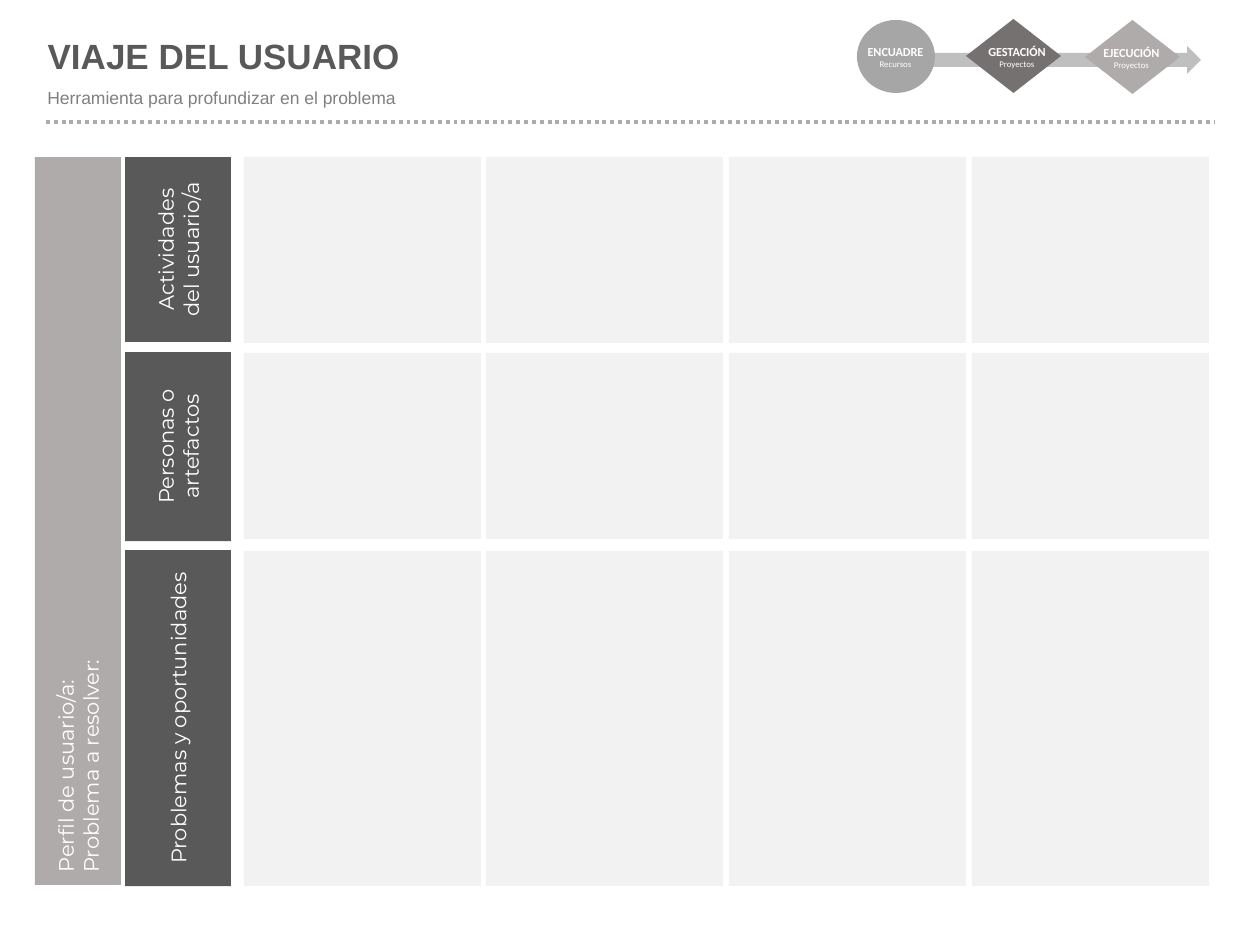
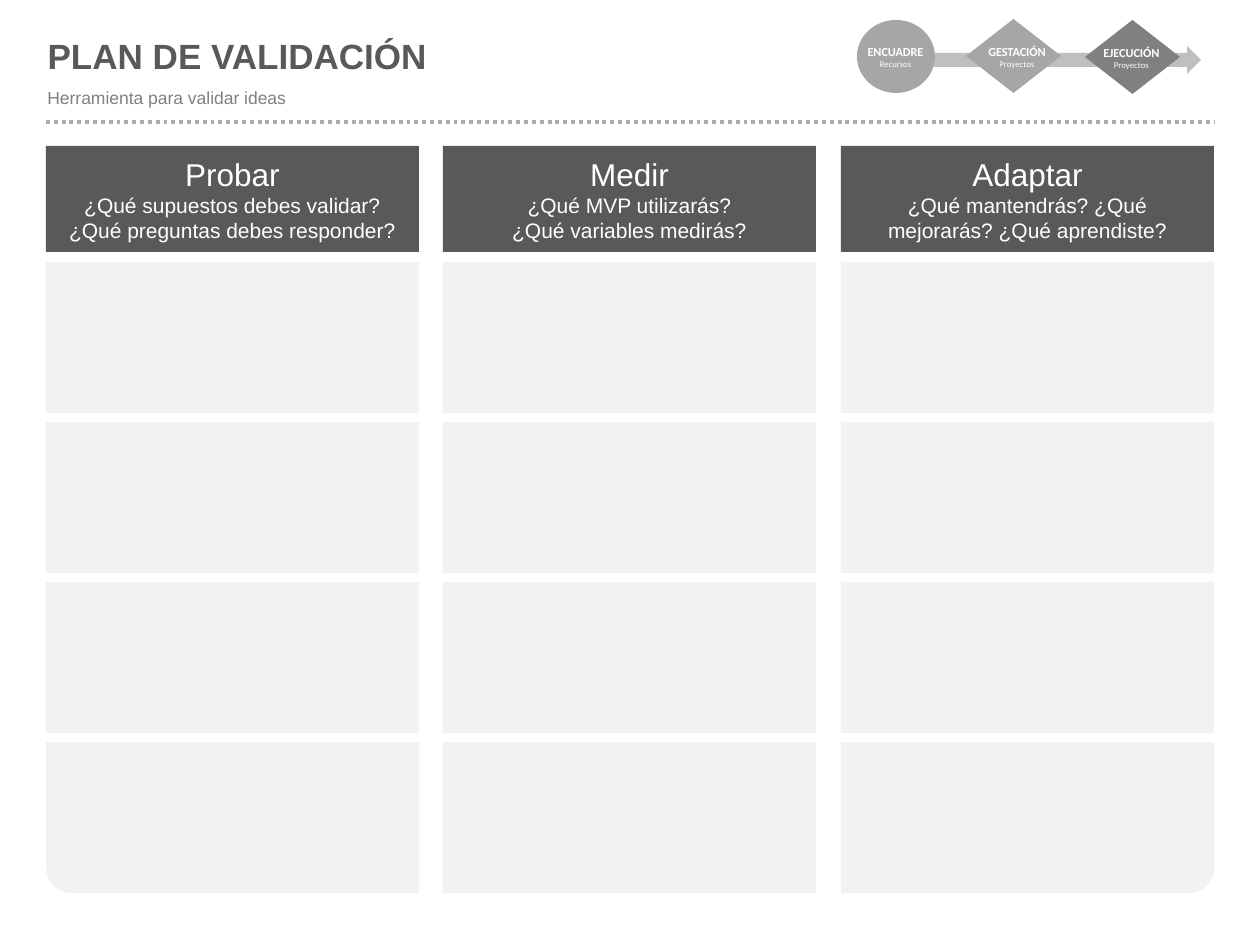
import dataclasses

import lxml.etree
import pptx
import pptx.dml.color
import pptx.enum.dml
import pptx.enum.shapes
import pptx.enum.text
import pptx.oxml.ns
import pptx.util


@dataclasses.dataclass(frozen=True)
class Theme:
    dark: str = "595959"
    subtitle: str = "808080"
    band: str = "AFABAB"
    arrow: str = "BFBFBF"
    stage: str = "A6A6A6"
    gestation: str = "767171"
    cell: str = "F2F2F2"
    white: str = "FFFFFF"
    heading_font: str = "Arial"
    label_font: str = "Montserrat"
    stage_font: str = "Calibri"
    title_size: int = 20
    heading_size: int = 18
    body_size: int = 12
    subtitle_size: int = 10
    stage_size: int = 7
    caption_size: int = 5


theme = Theme()
PX = 914400 / 126
SHAPES = pptx.enum.shapes.MSO_SHAPE
ALIGN = pptx.enum.text.PP_ALIGN
ANCHOR = pptx.enum.text.MSO_ANCHOR
AUTO_SIZE = pptx.enum.text.MSO_AUTO_SIZE


def add_block(shapes, kind, box, color, rotation=0):
    left, top, width, height = box
    if rotation == 270:
        left, top = left + (width - height) / 2, top + (height - width) / 2
        width, height = height, width
    shape = shapes.add_shape(kind, *(round(length * PX) for length in (left, top, width, height)))
    shape.rotation = rotation
    shape.shadow.inherit = False
    shape.fill.solid()
    shape.fill.fore_color.rgb = pptx.dml.color.RGBColor.from_string(color)
    shape.line.fill.background()
    return shape


def write_lines(shape, lines, font_name, color, align, anchor=ANCHOR.MIDDLE):
    frame = shape.text_frame
    frame.word_wrap = True
    frame.vertical_anchor = anchor
    for index, (text, size, bold) in enumerate(lines):
        paragraph = frame.add_paragraph() if index else frame.paragraphs[0]
        paragraph.alignment = align
        run = paragraph.add_run()
        run.text = text
        run.font.name = font_name
        run.font.size = pptx.util.Pt(size)
        run.font.bold = bold
        run.font.color.rgb = pptx.dml.color.RGBColor.from_string(color)


presentation = pptx.Presentation()
presentation.slide_width = round(1260 * PX)
presentation.slide_height = round(945 * PX)

stages = [
    ("ENCUADRE", "Recursos", SHAPES.OVAL, (857, 20, 78, 73), (854, 38, 83, 38)),
    ("GESTACIÓN", "Proyectos", SHAPES.DIAMOND, (966, 19, 95, 74), (974, 38, 86, 38)),
    ("EJECUCIÓN", "Proyectos", SHAPES.DIAMOND, (1085, 20, 95, 74), (1090, 39, 83, 38)),
]
pages = [
    ("VIAJE DEL USUARIO", "Herramienta para profundizar en el problema",
     (theme.stage, theme.gestation, theme.band)),
    ("PLAN DE VALIDACIÓN", "Herramienta para validar ideas",
     (theme.stage, theme.stage, theme.subtitle)),
]

for title_text, subtitle_text, stage_colors in pages:
    slide = presentation.slides.add_slide(presentation.slide_layouts[5])
    title = slide.shapes.title
    title.left, title.top, title.width, title.height = (
        round(length * PX) for length in (35, 33, 617, 58))
    write_lines(title, [(title_text, theme.title_size, True)],
                theme.heading_font, theme.dark, ALIGN.LEFT, ANCHOR.TOP)
    title.text_frame.auto_size = AUTO_SIZE.NONE
    title.text_frame.paragraphs[0].line_spacing = 0.9

    subtitle = slide.shapes.add_textbox(*(round(length * PX) for length in (35, 81, 897, 34)))
    write_lines(subtitle, [(subtitle_text, theme.subtitle_size, False)],
                theme.heading_font, theme.subtitle, ALIGN.LEFT, ANCHOR.TOP)

    divider = slide.shapes.add_connector(
        pptx.enum.shapes.MSO_CONNECTOR.STRAIGHT,
        *(round(length * PX) for length in (46, 122, 1214, 122)))
    divider.line.color.rgb = pptx.dml.color.RGBColor.from_string(theme.band)
    divider.line.width = pptx.util.Pt(2.25)
    divider.line.dash_style = pptx.enum.dml.MSO_LINE.ROUND_DOT
    lxml.etree.SubElement(divider._element.spPr, pptx.oxml.ns.qn("a:effectLst"))

    stage_group = slide.shapes.add_group_shape().shapes
    add_block(stage_group, SHAPES.RIGHT_ARROW, (930, 46, 271, 28), theme.arrow)
    for (name, caption, kind, marker_box, text_box), color in zip(stages, stage_colors):
        add_block(stage_group, kind, marker_box, color)
        label = stage_group.add_textbox(*(round(length * PX) for length in text_box))
        write_lines(label, [(name, theme.stage_size, True), (caption, theme.caption_size, False)],
                    theme.stage_font, theme.white, ALIGN.CENTER, ANCHOR.TOP)
        label.text_frame.word_wrap = False
        label.text_frame.auto_size = AUTO_SIZE.SHAPE_TO_FIT_TEXT

journey, validation = presentation.slides

profile = add_block(journey.shapes, SHAPES.RECTANGLE, (35, 157, 86, 728), theme.band, 270)
write_lines(profile, [(text, theme.body_size, False)
                      for text in ("Perfil de usuario/a:", "Problema a resolver:")],
            theme.label_font, theme.white, ALIGN.LEFT)

journey_rows = [
    (["Actividades", "del usuario/a"], 157, 185, 157, 186),
    (["Personas o artefactos"], 352, 189, 353, 186),
    (["Problemas y oportunidades"], 550, 336, 551, 335),
]
for texts, label_top, label_height, cell_top, cell_height in journey_rows:
    label = add_block(journey.shapes, SHAPES.RECTANGLE,
                      (125, label_top, 106, label_height), theme.dark, 270)
    write_lines(label, [(text, theme.body_size, False) for text in texts],
                theme.label_font, theme.white, ALIGN.CENTER)
    for column in range(4):
        add_block(journey.shapes, SHAPES.RECTANGLE,
                  (244 + column * 728 // 3, cell_top, 237, cell_height), theme.cell)

validation_columns = [
    ("Probar", ["¿Qué supuestos debes validar?", "¿Qué preguntas debes responder?"]),
    ("Medir", ["¿Qué MVP utilizarás?", "¿Qué variables medirás?"]),
    ("Adaptar", ["¿Qué mantendrás? ¿Qué mejorarás? ¿Qué aprendiste?"]),
]
for column, (heading, questions) in enumerate(validation_columns):
    left = 46 + column * 795 // 2
    header = add_block(validation.shapes, SHAPES.RECTANGLE, (left, 146, 373, 106), theme.dark)
    write_lines(header, [(heading, theme.heading_size, False)]
                + [(question, theme.body_size, False) for question in questions],
                theme.heading_font, theme.white, ALIGN.CENTER)
    for row in range(4):
        box = (left, 262 + row * 160, 373, 151)
        if row == 3 and column != 1:
            corner = add_block(validation.shapes, SHAPES.ROUND_1_RECTANGLE, box, theme.cell, 180)
            if column == 2:
                corner._element.spPr.xfrm.set("flipH", "1")
        else:
            add_block(validation.shapes, SHAPES.RECTANGLE, box, theme.cell)

presentation.save("out.pptx")
